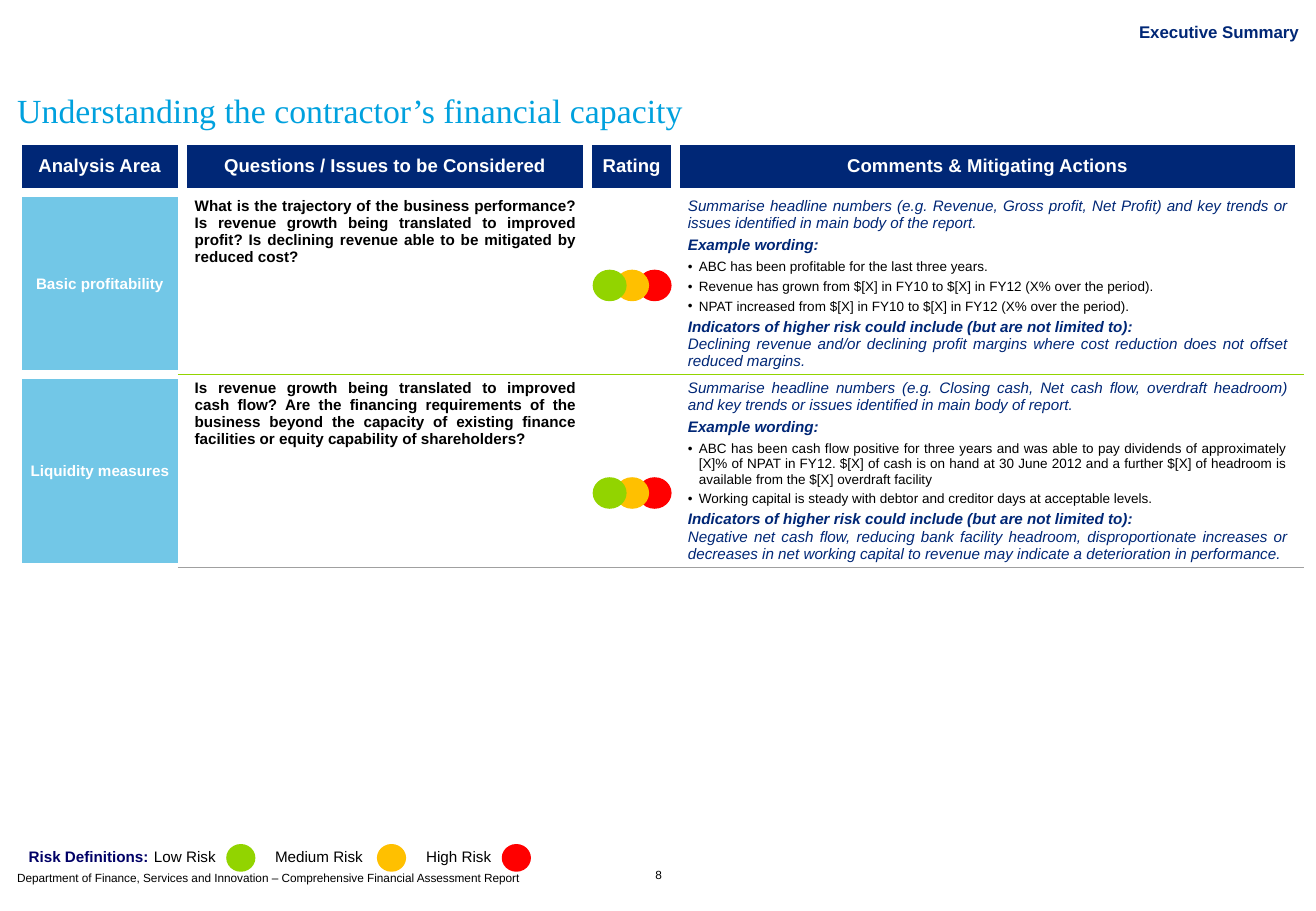
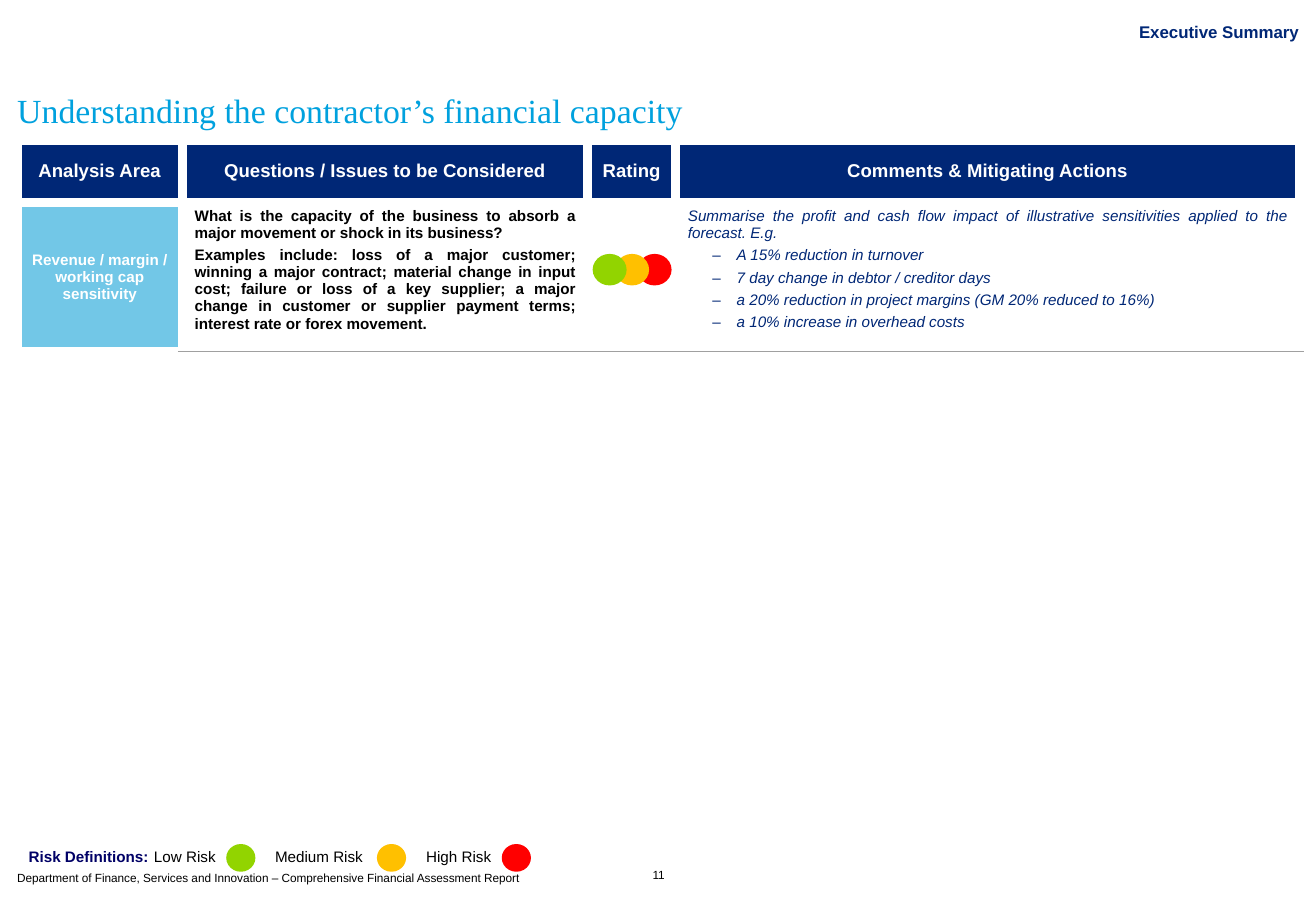
from dataclasses import dataclass

from lxml.etree import SubElement
from pptx import Presentation
from pptx.dml.color import RGBColor
from pptx.enum.shapes import MSO_SHAPE
from pptx.enum.text import MSO_ANCHOR, MSO_AUTO_SIZE, PP_ALIGN
from pptx.oxml.ns import qn
from pptx.util import Cm, Pt

COLOURS = {
    "navy": "002776", "legend": "000066", "title": "00A1DE", "label": "72C7E7",
    "low": "92D400", "medium": "FFC000", "high": "FF0000",
    "white": "FFFFFF", "black": "000000", "grey": "A0A0A0",
}
COLUMN_WIDTHS = (3.45, 8.48, 1.83, 13.05)
HEADINGS = ("Analysis Area", "Questions / Issues to be Considered", "Rating",
            "Comments & Mitigating Actions")
TABLE_LEFT, TABLE_TOP = 0.36, 3.02
INDICATORS = "Indicators of higher risk could include (but are not limited to):"


@dataclass(frozen=True)
class Style:
    """Look of one kind of paragraph, with spacing in points and indents in cm."""
    size: float = 9
    colour: str = "black"
    bold: bool = False
    italic: bool = False
    align: PP_ALIGN = PP_ALIGN.JUSTIFY
    after: float = 3
    font: str = "Arial"
    bullet: str = ""
    margin: float = 0
    hanging: float = 0


STYLES = {
    "section": Style(10, "navy", bold=True, align=PP_ALIGN.RIGHT, after=0),
    "title": Style(20, "title", align=PP_ALIGN.LEFT, font="Times New Roman"),
    "heading": Style(11, "white", bold=True, align=PP_ALIGN.CENTER),
    "label": Style(9, "white", bold=True, align=PP_ALIGN.CENTER),
    "question": Style(bold=True),
    "summary": Style(colour="navy", italic=True),
    "example": Style(colour="navy", bold=True, italic=True),
    "indicator": Style(colour="navy", bold=True, italic=True, after=0),
    "point": Style(8, after=2.7, bullet="•", margin=0.23, hanging=0.23),
    "dash": Style(colour="navy", italic=True, align=PP_ALIGN.LEFT, bullet="–",
                  margin=1.02, hanging=0.51),
    "footer": Style(7, align=PP_ALIGN.LEFT, after=0),
    "number": Style(7, align=PP_ALIGN.CENTER, after=0),
    "legend title": Style(colour="legend", bold=True, align=PP_ALIGN.LEFT, after=0),
    "legend": Style(align=PP_ALIGN.LEFT, after=0),
}


@dataclass(frozen=True)
class AnalysisRow:
    """Content of one analysis area, with its height and rating offset in cm."""
    label: str
    questions: tuple
    comments: tuple
    height: float
    rating_offset: float


PROFITABILITY = AnalysisRow(
    "Basic profitability",
    ("What is the trajectory of the business performance? Is revenue growth being translated "
     "to improved profit? Is declining revenue able to be mitigated by reduced cost?",),
    (("summary", "Summarise headline numbers (e.g. Revenue, Gross profit, Net Profit) and key "
                 "trends or issues identified in main body of the report."),
     ("example", "Example wording:"),
     ("point", "ABC has been profitable for the last three years."),
     ("point", "Revenue has grown from $[X] in FY10 to $[X] in FY12 (X% over the period)."),
     ("point", "NPAT increased from $[X] in FY10 to $[X] in FY12 (X% over the period)."),
     ("indicator", INDICATORS),
     ("summary", "Declining revenue and/or declining profit margins where cost reduction does "
                 "not offset reduced margins.")),
    3.8, 1.62)
LIQUIDITY = AnalysisRow(
    "Liquidity measures",
    ("Is revenue growth being translated to improved cash flow? Are the financing requirements "
     "of the business beyond the capacity of existing finance facilities or equity capability "
     "of shareholders?",),
    (("summary", "Summarise headline numbers (e.g. Closing cash, Net cash flow, overdraft "
                 "headroom) and key trends or issues identified in main body of report."),
     ("example", "Example wording:"),
     ("point", "ABC has been cash flow positive for three years and was able to pay dividends of "
               "approximately [X]% of NPAT in FY12. $[X] of cash is on hand at 30 June 2012 and a "
               "further $[X] of headroom is available from the $[X] overdraft facility"),
     ("point", "Working capital is steady with debtor and creditor days at acceptable levels."),
     ("indicator", INDICATORS),
     ("summary", "Negative net cash flow, reducing bank facility headroom, disproportionate "
                 "increases or decreases in net working capital to revenue may indicate a "
                 "deterioration in performance.")),
    4.02, 2.16)
SENSITIVITY = AnalysisRow(
    "Revenue / margin / working cap sensitivity",
    ("What is the capacity of the business to absorb a major movement or shock in its business?",
     "Examples include: loss of a major customer; winning a major contract; material change in "
     "input cost; failure or loss of a key supplier; a major change in customer or supplier "
     "payment terms; interest rate or forex movement."),
    (("summary", "Summarise the profit and cash flow impact of illustrative sensitivities "
                 "applied to the forecast. E.g."),
     ("dash", "A 15% reduction in turnover"),
     ("dash", "7 day change in debtor / creditor days"),
     ("dash", "a 20% reduction in project margins (GM 20% reduced to 16%)"),
     ("dash", "a 10% increase in overhead costs")),
    3.12, 1.08)


def colour(name):
    """Return the named colour."""
    return RGBColor.from_string(COLOURS[name])


def add_run(paragraph, text, style):
    """Add one run of text in the given style."""
    run = paragraph.add_run()
    run.text = text
    font = run.font
    font.name, font.size = style.font, Pt(style.size)
    font.bold, font.italic = style.bold, style.italic
    font.color.rgb = colour(style.colour)


def format_paragraph(paragraph, style):
    """Set alignment, spacing, indent and bullet of a paragraph."""
    paragraph.alignment = style.align
    paragraph.space_before, paragraph.space_after = Pt(0), Pt(style.after)
    properties = paragraph._p.get_or_add_pPr()
    properties.set("marL", str(Cm(style.margin)))
    properties.set("indent", str(-Cm(style.hanging)))
    if style.bullet:
        SubElement(properties, qn("a:buFont")).set("typeface", style.font)
        SubElement(properties, qn("a:buChar")).set("char", style.bullet)
    else:
        SubElement(properties, qn("a:buNone"))


def write(frame, items):
    """Fill a text frame with (style name, text) paragraphs."""
    for index, (name, text) in enumerate(items):
        paragraph = frame.add_paragraph() if index else frame.paragraphs[0]
        format_paragraph(paragraph, STYLES[name])
        add_run(paragraph, text, STYLES[name])


def prepare(frame, anchor):
    """Fix the size, wrapping and anchor of a text frame and clear its insets."""
    frame.auto_size, frame.word_wrap = MSO_AUTO_SIZE.NONE, True
    frame.vertical_anchor = anchor
    frame.margin_left = frame.margin_right = frame.margin_top = frame.margin_bottom = 0


def place(shape, left, top, width, height):
    """Move and size a shape."""
    shape.left, shape.top, shape.width, shape.height = map(Cm, (left, top, width, height))


def add_text(slide, box, anchor, name, text):
    """Add a text box with one paragraph in the named style."""
    frame = slide.shapes.add_textbox(*map(Cm, box)).text_frame
    prepare(frame, anchor)
    write(frame, [(name, text)])


def add_dot(slide, left, top, width, height, name):
    """Add one risk-coloured ellipse."""
    dot = slide.shapes.add_shape(MSO_SHAPE.OVAL, *map(Cm, (left, top, width, height)))
    dot.shadow.inherit = False
    dot.fill.solid()
    dot.fill.fore_color.rgb = colour(name)
    dot.line.fill.background()


def add_rating(slide, left, top):
    """Add the three overlapping rating dots, with low risk in front."""
    for step, name in ((2, "high"), (1, "medium"), (0, "low")):
        add_dot(slide, left + step * 0.47, top, 0.71, 0.66, name)


def set_border(cell, side, name, width):
    """Set one border of a table cell."""
    line = SubElement(cell._tc.get_or_add_tcPr(), qn(f"a:ln{side}"), w=str(Pt(width)))
    fill = SubElement(line, qn("a:solidFill"))
    SubElement(fill, qn("a:srgbClr")).set("val", COLOURS[name])


def format_cell(cell, items, fill, anchor, top=("white", 6), bottom=("white", 6),
                margins=(0.12, 0.1)):
    """Set the borders, fill, margins and text of a table cell."""
    white = ("white", 6)
    for side, border in zip("LRTB", (white, white, top, bottom)):
        set_border(cell, side, *border)
    cell.fill.solid()
    cell.fill.fore_color.rgb = colour(fill)
    cell.vertical_anchor = anchor
    cell.margin_left = cell.margin_right = Cm(0.26)
    cell.margin_top, cell.margin_bottom = map(Cm, margins)
    write(cell.text_frame, items)


def add_analysis_table(slide, left, top, header_height, rows):
    """Add the analysis table and a rating for each of its rows."""
    heights = [header_height] + [row.height for row in rows]
    box = map(Cm, (left, top, sum(COLUMN_WIDTHS), sum(heights)))
    table = slide.shapes.add_table(len(heights), len(COLUMN_WIDTHS), *box).table
    table.first_row = table.horz_banding = False
    for column, width in zip(table.columns, COLUMN_WIDTHS):
        column.width = Cm(width)
    for table_row, height in zip(table.rows, heights):
        table_row.height = Cm(height)
    for index, heading in enumerate(HEADINGS):
        format_cell(table.cell(0, index), [("heading", heading)], "navy",
                    MSO_ANCHOR.MIDDLE, top=("white", 0.5), margins=(0.15, 0.25))
    rating_left = left + sum(COLUMN_WIDTHS[:2]) + 0.1
    row_top = top + header_height
    above = ("white", 6)
    for index, row in enumerate(rows, 1):
        below = ("grey", 0.75) if index == len(rows) else ("low", 1)
        format_cell(table.cell(index, 0), [("label", row.label)], "label", MSO_ANCHOR.MIDDLE)
        questions = [("question", text) for text in row.questions]
        for column, items in enumerate((questions, (), row.comments), 1):
            format_cell(table.cell(index, column), items, "white", MSO_ANCHOR.TOP, above, below)
        add_rating(slide, rating_left, row_top + row.rating_offset)
        row_top += row.height
        above = below


def add_legend(slide, left, top):
    """Add the risk definitions, each label followed by its dot."""
    add_text(slide, (left + 0.24, top, 2.6, 0.64), MSO_ANCHOR.MIDDLE,
             "legend title", "Risk Definitions:")
    for label_offset, dot_offset, name in ((2.86, 4.37, "low"), (5.39, 7.52, "medium"),
                                           (8.55, 10.13, "high")):
        box = (left + label_offset, top, dot_offset - label_offset, 0.64)
        add_text(slide, box, MSO_ANCHOR.MIDDLE, "legend", f"{name.title()} Risk")
        add_dot(slide, left + dot_offset, top + 0.05, 0.61, 0.58, name)


def add_footer(slide, left, top, number):
    """Add the report name and the page number."""
    add_text(slide, (left, top, 12, 0.51), MSO_ANCHOR.MIDDLE, "footer",
             "Department of Finance, Services and Innovation – "
             "Comprehensive Financial Assessment Report")
    add_text(slide, (left + 13.03, top + 0.03, 0.76, 0.3), MSO_ANCHOR.BOTTOM, "number", number)


def add_analysis_slide(presentation, layout, number, header_height, rows):
    """Add one slide of the executive summary."""
    slide = presentation.slides.add_slide(layout)
    title, body = slide.shapes.title, slide.placeholders[1]
    prepare(title.text_frame, MSO_ANCHOR.TOP)
    write(title.text_frame, [("section", "Executive Summary")])
    prepare(body.text_frame, MSO_ANCHOR.MIDDLE)
    write(body.text_frame, [("title", "Understanding the contractor’s financial capacity")])
    add_analysis_table(slide, TABLE_LEFT, TABLE_TOP, header_height, rows)
    add_legend(slide, TABLE_LEFT, 17.6)
    add_footer(slide, TABLE_LEFT, 18.11, number)


def main():
    """Build and save the presentation."""
    presentation = Presentation()
    presentation.slide_width, presentation.slide_height = Cm(27.51), Cm(19.05)
    layout = presentation.slide_layouts[1]
    place(layout.placeholders[0], 16.81, 0.46, 10.34, 0.43)
    place(layout.placeholders[1], TABLE_LEFT, 0.88, 26.82, 2.84)
    add_analysis_slide(presentation, layout, "8", 1, (PROFITABILITY, LIQUIDITY))
    add_analysis_slide(presentation, layout, "11", 1.21, (SENSITIVITY,))
    presentation.save("out.pptx")


if __name__ == "__main__":
    main()
